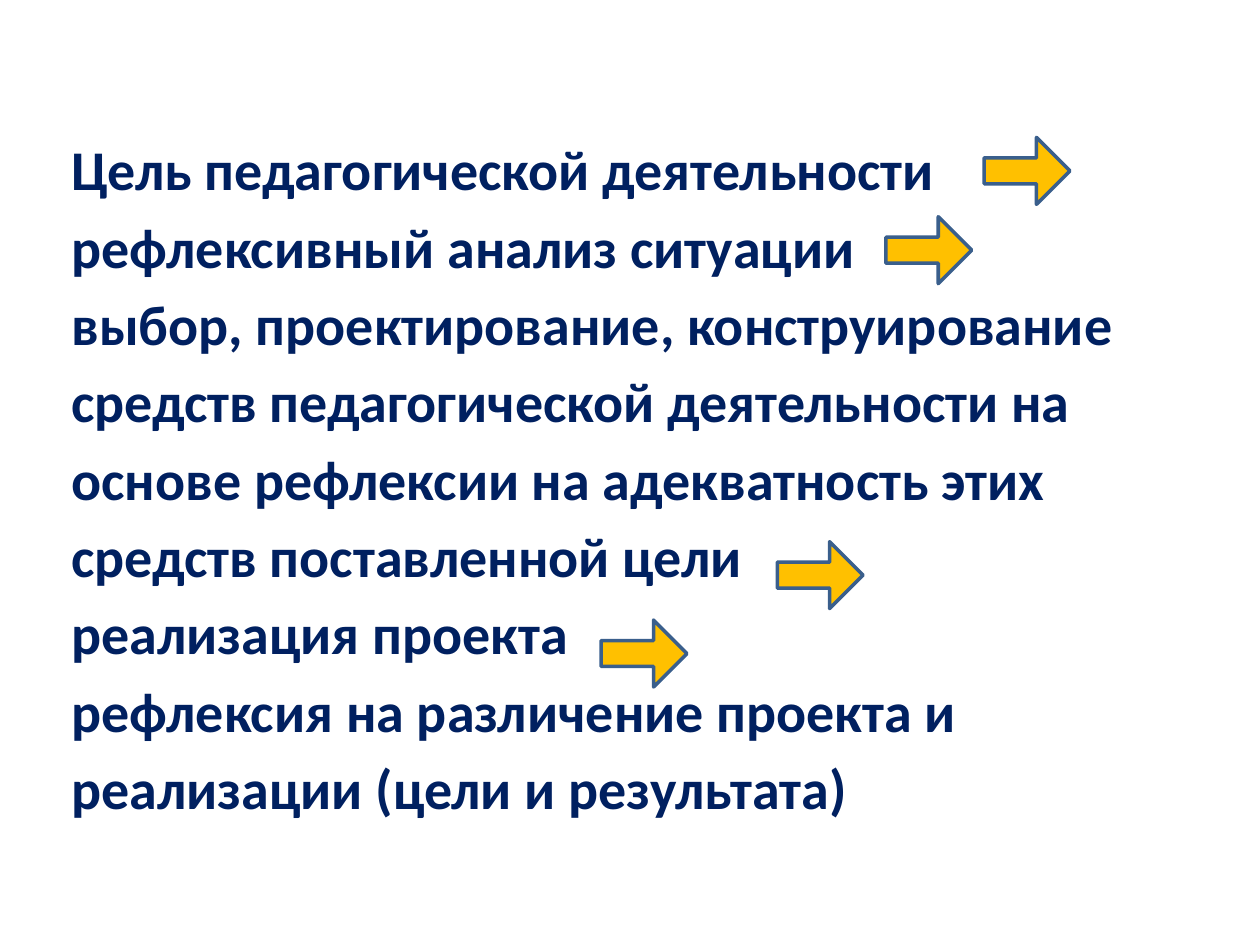
from pptx import Presentation
from pptx.dml.color import RGBColor
from pptx.enum.shapes import MSO_SHAPE
from pptx.enum.text import MSO_ANCHOR, PP_ALIGN
from pptx.util import Cm, Pt

NAVY = RGBColor(0x00, 0x20, 0x60)
GOLD = RGBColor(0xFF, 0xC0, 0x00)
STEEL_BLUE = RGBColor(0x3A, 0x5F, 0x8C)

LINES = [
    "Цель педагогической деятельности",
    "рефлексивный анализ ситуации",
    "выбор, проектирование, конструирование",
    "средств педагогической деятельности на",
    "основе рефлексии на адекватность этих",
    "средств поставленной цели",
    "реализация проекта",
    "рефлексия на различение проекта и",
    "реализации (цели и результата)",
]

# Left and top of each arrow, in centimetres
ARROWS = [(19.84, 2.77), (17.86, 4.37), (15.67, 10.92), (12.12, 12.5)]


class SlideBuilder:
    text_font = {"name": "Calibri", "size": Pt(32), "bold": True}
    paragraph_format = {"alignment": PP_ALIGN.LEFT}
    frame_format = {"word_wrap": True, "vertical_anchor": MSO_ANCHOR.TOP}
    space_between = Pt(5.8)
    hanging_indent = Cm(0.95)
    arrow_size = (Cm(1.73), Cm(1.35))
    arrow_adjustments = (0.387, 0.5)

    def __init__(self, slide):
        self.slide = slide

    @staticmethod
    def apply(target, values):
        for name, value in values.items():
            setattr(target, name, value)

    def text(self, lines, left, top, width, height):
        shape = self.slide.shapes.add_textbox(Cm(left), Cm(top), Cm(width), Cm(height))
        frame = shape.text_frame
        self.apply(frame, self.frame_format)
        frame.text = "\n".join(lines)
        for index, paragraph in enumerate(frame.paragraphs):
            properties = paragraph._p.get_or_add_pPr()
            properties.set("marL", str(self.hanging_indent))
            properties.set("indent", str(-self.hanging_indent))
            self.apply(paragraph, self.paragraph_format)
            paragraph.space_before = self.space_between if index else Pt(0)
            for run in paragraph.runs:
                self.apply(run.font, self.text_font)
                run.font.color.rgb = NAVY

    def arrow(self, left, top):
        shape = self.slide.shapes.add_shape(
            MSO_SHAPE.RIGHT_ARROW, Cm(left), Cm(top), *self.arrow_size)
        for index, value in enumerate(self.arrow_adjustments):
            shape.adjustments[index] = value
        shape.shadow.inherit = False
        shape.fill.solid()
        shape.fill.fore_color.rgb = GOLD
        shape.line.color.rgb = STEEL_BLUE
        shape.line.width = Pt(2)


def main():
    presentation = Presentation()
    presentation.slide_width, presentation.slide_height = Cm(25.4), Cm(19.05)
    builder = SlideBuilder(presentation.slides.add_slide(presentation.slide_layouts[6]))

    # Steps of the reflective process
    builder.text(LINES, 1.19, 2.59, 22.86, 15.09)

    # Arrows leading to the next step
    for left, top in ARROWS:
        builder.arrow(left, top)

    presentation.save("out.pptx")


if __name__ == "__main__":
    main()
